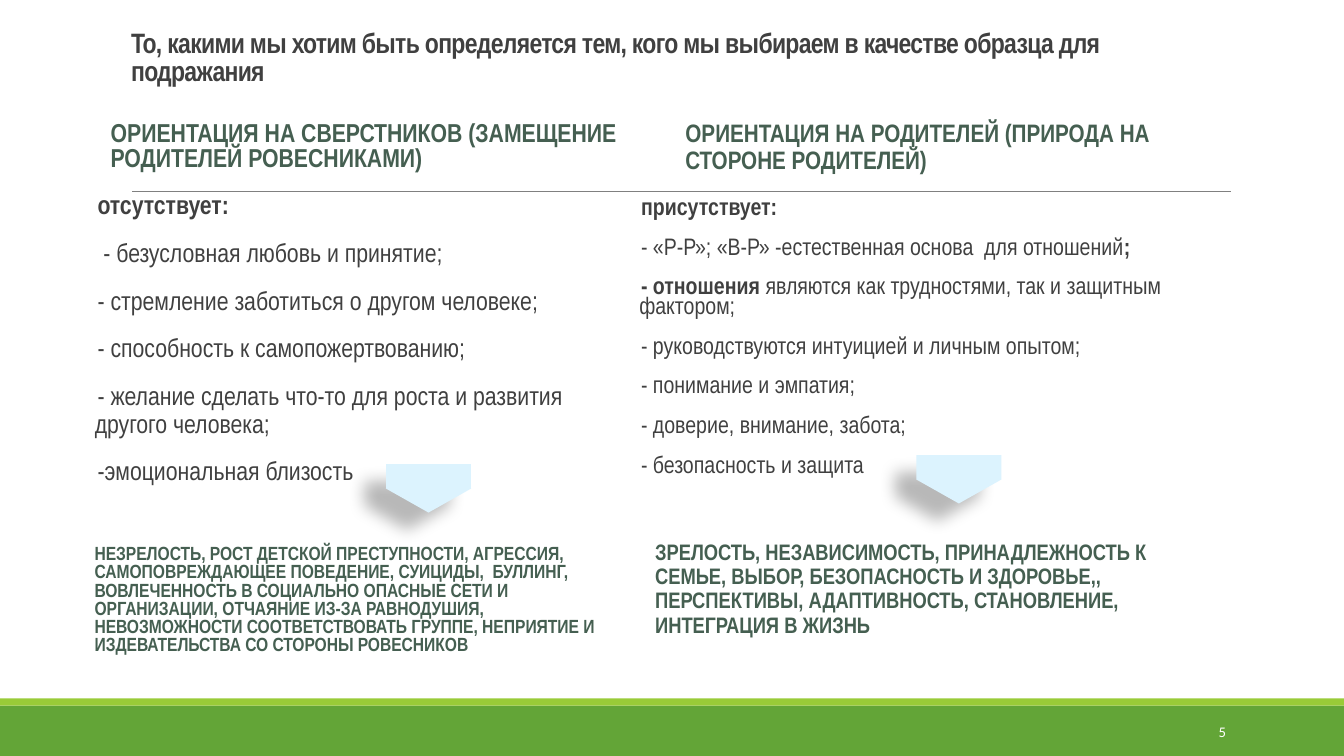
from dataclasses import dataclass

from lxml import etree
from pptx import Presentation
from pptx.dml.color import RGBColor
from pptx.enum.shapes import MSO_CONNECTOR, MSO_SHAPE
from pptx.enum.text import MSO_ANCHOR, MSO_AUTO_SIZE, PP_ALIGN
from pptx.oxml.ns import qn
from pptx.util import Emu, Inches, Pt

LINE = MSO_CONNECTOR.STRAIGHT
RECTANGLE, LEFT_ARROW = MSO_SHAPE.RECTANGLE, MSO_SHAPE.LEFT_ARROW
TOP, MIDDLE, BOTTOM = MSO_ANCHOR.TOP, MSO_ANCHOR.MIDDLE, MSO_ANCHOR.BOTTOM
LEFT, RIGHT = PP_ALIGN.LEFT, PP_ALIGN.RIGHT
NO_AUTOFIT = MSO_AUTO_SIZE.NONE
COLORS = {
    "white": "FFFFFF",
    "green": "63A537",
    "lime": "99CB38",
    "rule": "808080",
    "text": "404040",
    "heading": "455F51",
    "arrow": "DCF3FE",
    "shadow": "000000",
}


@dataclass(frozen=True)
class Span:
    text: str
    bold: bool = False


@dataclass(frozen=True)
class Block:
    left: float
    top: float
    width: float
    height: float
    size: float
    line_spacing: float
    paragraphs: list[list[Span]]
    color: str = "heading"
    font: str = "Arial Narrow"
    anchor: MSO_ANCHOR = MIDDLE
    align: PP_ALIGN = LEFT
    before: float = 12
    after: float = 2
    is_list: bool = False


def rgb(name: str) -> RGBColor:
    return RGBColor.from_string(COLORS[name])


def bold(text: str) -> list[list[Span]]:
    return [[Span(text, True)]]


def plain(*texts: str) -> list[list[Span]]:
    return [[Span(text)] for text in texts]


def add_bullet(para) -> None:
    properties = para._p.get_or_add_pPr()
    properties.set("marL", str(Inches(0.1)))
    properties.set("indent", str(-Inches(0.1)))
    color = etree.SubElement(properties, qn("a:buClr"))
    etree.SubElement(color, qn("a:srgbClr"), val=COLORS["lime"])
    etree.SubElement(properties, qn("a:buChar"), char=" ")


def fill_text(box, block: Block) -> None:
    box.left, box.top = Inches(block.left), Inches(block.top)
    box.width, box.height = Inches(block.width), Inches(block.height)
    frame = box.text_frame
    frame.word_wrap = True
    frame.auto_size = NO_AUTOFIT
    frame.vertical_anchor = block.anchor
    frame.margin_left = frame.margin_right = Inches(0 if block.is_list else 0.1)
    frame.margin_top = frame.margin_bottom = Inches(0.05)
    for index, spans in enumerate(block.paragraphs):
        para = frame.add_paragraph() if index else frame.paragraphs[0]
        para.alignment = block.align
        para.line_spacing = block.line_spacing
        para.space_before, para.space_after = Pt(block.before), Pt(block.after)
        if block.is_list:
            add_bullet(para)
        for span in spans:
            run = para.add_run()
            run.text = span.text
            run.font.name = block.font
            run.font.size = Pt(block.size)
            run.font.bold = span.bold
            run.font.color.rgb = rgb(block.color)


def add_band(page, top: float, height: float, color: str) -> None:
    band = page.shapes.add_shape(
        RECTANGLE, 0, Inches(top), Inches(13.33), Inches(height))
    band.shadow.inherit = False
    band.fill.solid()
    band.fill.fore_color.rgb = rgb(color)
    band.line.fill.background()


def add_rule(page) -> None:
    rule = page.shapes.add_connector(
        LINE, Inches(1.31), Inches(1.9), Inches(12.21), Inches(1.9))
    rule.line.color.rgb = rgb("rule")
    rule.line.width = Pt(0.5)
    etree.SubElement(rule._element.spPr, qn("a:effectLst"))


def add_arrow(page, left: float, top: float) -> None:
    arrow = page.shapes.add_shape(
        LEFT_ARROW, Inches(left), Inches(top), Inches(0.48), Inches(0.85))
    arrow.rotation = 270
    arrow.adjustments[0], arrow.adjustments[1] = 0.99, 0.5
    arrow.fill.solid()
    arrow.fill.fore_color.rgb = rgb("arrow")
    arrow.line.fill.background()
    arrow.shadow.inherit = False
    effects = arrow._element.spPr.find(qn("a:effectLst"))
    shadow = etree.SubElement(
        effects, qn("a:outerShdw"), blurRad=str(Emu(Pt(11.8))),
        dist=str(Emu(Pt(19.7))), dir=str(141 * 60000), rotWithShape="0")
    color = etree.SubElement(shadow, qn("a:srgbClr"), val=COLORS["shadow"])
    etree.SubElement(color, qn("a:alpha"), val="28000")


TITLE = Block(
    1.2, 0.04, 11, 0.88, 20, 0.85,
    bold("То, какими мы хотим быть определяется тем, кого мы выбираем "
         "в качестве образца для подражания"),
    color="text", anchor=BOTTOM, before=0, after=0)

BLOCKS = [
    Block(1, 1.16, 5.4, 0.61, 18.5, 0.8,
          bold("ОРИЕНТАЦИЯ НА СВЕРСТНИКОВ (ЗАМЕЩЕНИЕ РОДИТЕЛЕЙ РОВЕСНИКАМИ)")),
    Block(0.84, 1.86, 5.4, 3.16, 18.5, 0.9,
          bold("отсутствует:") + plain(
              " - безусловная любовь и принятие;",
              "- стремление заботиться о другом человеке;",
              "- способность к самопожертвованию;",
              "- желание сделать что-то для роста и развития другого человека;",
              "-эмоциональная близость"),
          color="text", anchor=TOP, is_list=True),
    Block(6.7, 1.23, 5.4, 0.47, 18, 0.9,
          bold("ОРИЕНТАЦИЯ НА РОДИТЕЛЕЙ (ПРИРОДА НА СТОРОНЕ РОДИТЕЛЕЙ)")),
    Block(6.24, 1.93, 6.02, 2.92, 17, 0.7,
          bold("присутствует:") + [
              [Span("- «Р-Р»; «В-Р» -естественная основа  для отношений"),
               Span(";", True)],
              [Span("- отношения ", True),
               Span("являются как трудностями, так и защитным фактором;")],
          ] + plain(
              "- руководствуются интуицией и личным опытом;",
              "- понимание и эмпатия;",
              "- доверие, внимание, забота;",
              "- безопасность и защита"),
          color="text", anchor=TOP, is_list=True),
    Block(10.83, 7.06, 1.43, 0.4, 10.5, 1, plain("5"), color="white",
          font="Calibri", align=RIGHT, before=0, after=0),
    Block(0.84, 5.31, 5.4, 1.3, 13.6, 0.8,
          bold("НЕЗРЕЛОСТЬ, РОСТ ДЕТСКОЙ ПРЕСТУПНОСТИ, АГРЕССИЯ,  "
               "САМОПОВРЕЖДАЮЩЕЕ ПОВЕДЕНИЕ, СУИЦИДЫ,  БУЛЛИНГ, "
               "ВОВЛЕЧЕННОСТЬ В СОЦИАЛЬНО ОПАСНЫЕ СЕТИ И ОРГАНИЗАЦИИ, "
               "ОТЧАЯНИЕ ИЗ-ЗА РАВНОДУШИЯ, НЕВОЗМОЖНОСТИ СООТВЕТСТВОВАТЬ "
               "ГРУППЕ, НЕПРИЯТИЕ И ИЗДЕВАТЕЛЬСТВА СО СТОРОНЫ РОВЕСНИКОВ")),
    Block(6.4, 5.2, 5.4, 1.3, 16, 0.9,
          bold("ЗРЕЛОСТЬ, НЕЗАВИСИМОСТЬ, ПРИНАДЛЕЖНОСТЬ К СЕМЬЕ, ВЫБОР, "
               "БЕЗОПАСНОСТЬ И ЗДОРОВЬЕ,, ПЕРСПЕКТИВЫ, АДАПТИВНОСТЬ, "
               "СТАНОВЛЕНИЕ, ИНТЕГРАЦИЯ В ЖИЗНЬ")),
]


def main() -> None:
    deck = Presentation()
    deck.slide_width, deck.slide_height = Inches(13.33), Inches(7.5)
    page = deck.slides.add_slide(deck.slide_layouts[5])
    add_band(page, 7, 0.5, "green")
    add_band(page, 6.93, 0.07, "lime")
    add_rule(page)
    title = page.shapes.title
    fill_text(title, TITLE)
    for run in title.text_frame.paragraphs[0].runs:
        run.font._element.set("spc", "-50")
    for block in BLOCKS:
        box = page.shapes.add_textbox(0, 0, 0, 0)
        fill_text(box, block)
    for left, top in ((4.01, 4.42), (9.27, 4.33)):
        add_arrow(page, left, top)
    deck.save("out.pptx")


if __name__ == "__main__":
    main()
